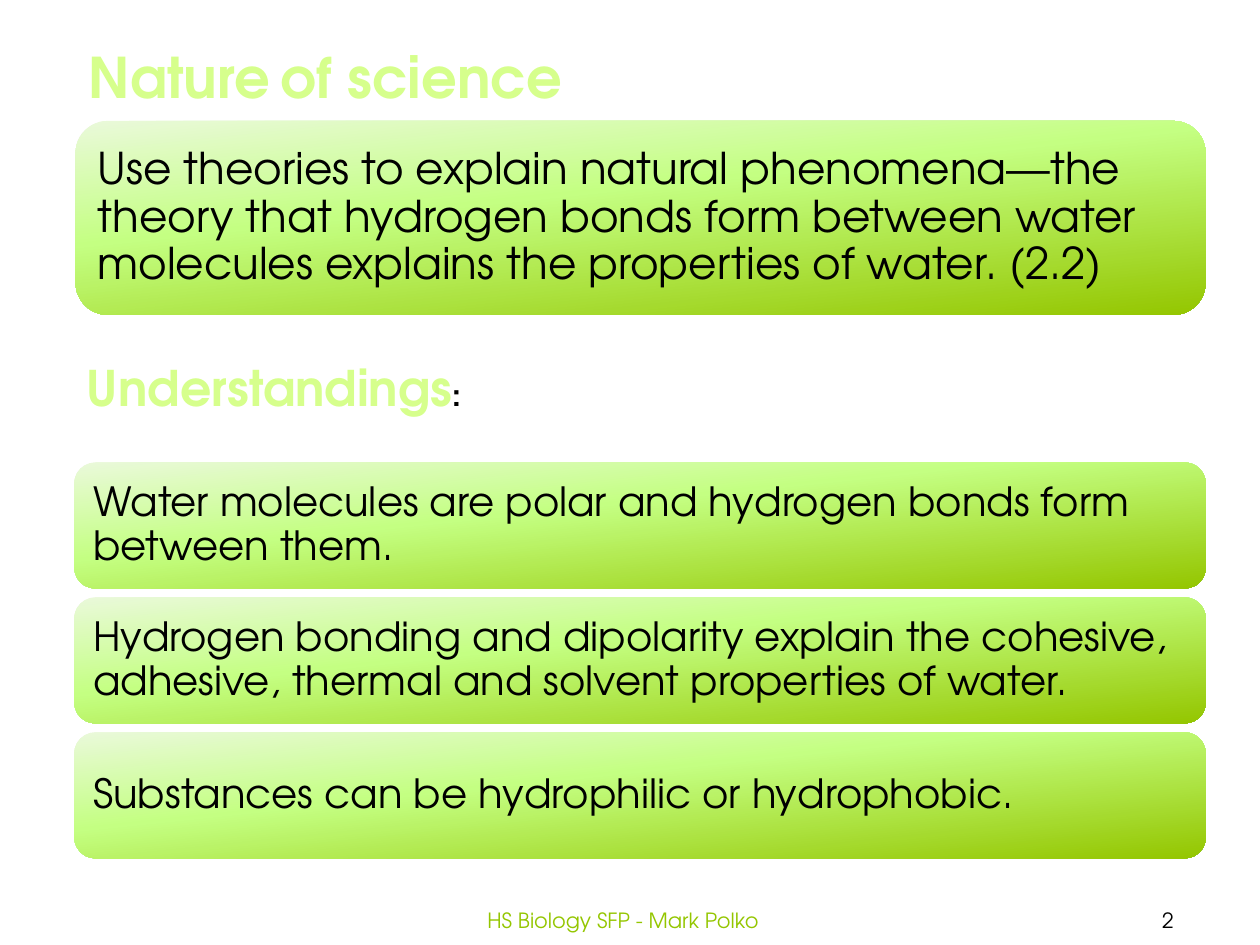
import pptx
import pptx.util
import pptx.dml.color
import pptx.enum.shapes
import pptx.enum.text
import pptx.oxml
import pptx.oxml.ns

Pt = pptx.util.Pt
ALIGN = pptx.enum.text.PP_ALIGN
ANCHOR = pptx.enum.text.MSO_ANCHOR

FONT = "TeX Gyre Adventor"
BLACK, LIME, GREEN = "000000", "D6FF8C", "94C600"
STOPS = [(0, "EAF9DA"), (40, "C4FF82"), (100, GREEN)]
ANGLE = 84

# Content: heading runs are (text, size, colour)
TITLE = [("Nature", 32, LIME), (" ", 20, BLACK), ("of science", 32, LIME)]
SUBTITLE = [("Understandings", 28, LIME), (":", 18, BLACK)]
THEORY = ("Use theories to explain natural phenomena—the theory that hydrogen bonds "
          "form between water molecules explains the properties of water. (2.2)")
UNDERSTANDINGS = [
    "Water molecules are polar and hydrogen bonds form between them.",
    "Hydrogen bonding and dipolarity explain the cohesive, adhesive, thermal "
    "and solvent properties of water.",
    "Substances can be hydrophilic or hydrophobic.",
]
FOOTER = "HS Biology SFP - Mark Polko"
PAGE = "2"

# Layout
CARD_LEFT, CARD_WIDTH = 42.5, 646.5
CARD_TOP, CARD_HEIGHT, CARD_STEP = 264.3, 72, 77.1
THEORY_BOX = (43.2, 69.1, 645.8, 110.9)


def rgb(value):
    return pptx.dml.color.RGBColor.from_string(value)


def add_text(slide, box, runs, align=ALIGN.LEFT, anchor=ANCHOR.MIDDLE, wrap=True, bold=False):
    sp = slide.shapes.add_textbox(*map(Pt, box))
    tf = sp.text_frame
    tf.word_wrap = wrap
    tf.vertical_anchor = anchor
    p = tf.paragraphs[0]
    p.alignment = align
    p.font.name = FONT
    p.font.bold = bold
    for text, size, color in runs:
        r = p.add_run()
        r.text = text
        r.font.name = FONT
        r.font.size = Pt(size)
        r.font.bold = bold
        r.font.color.rgb = rgb(color)
    return tf


def fill_gradient(sp):
    stops = "".join(f'<a:gs pos="{pos * 1000}"><a:srgbClr val="{color}"/></a:gs>'
                    for pos, color in STOPS)
    grad = pptx.oxml.parse_xml(
        f'<a:gradFill {pptx.oxml.ns.nsdecls("a")} rotWithShape="1"><a:gsLst>{stops}</a:gsLst>'
        f'<a:lin ang="{ANGLE * 60000}" scaled="1"/></a:gradFill>')
    sp.fill.background()
    old = sp._element.spPr.find(pptx.oxml.ns.qn("a:noFill"))
    old.getparent().replace(old, grad)


def add_card(slide, box, text, size):
    left, top, width, height = box
    sp = slide.shapes.add_shape(pptx.enum.shapes.MSO_SHAPE.ROUNDED_RECTANGLE, *map(Pt, box))
    sp.shadow.inherit = False
    sp.line.fill.background()
    fill_gradient(sp)
    # The text area stays clear of the rounded corners
    inset = round(height * 0.05, 1)
    tf = add_text(slide, (left + inset, top + inset, width - 2 * inset, height - 2 * inset),
                  [(text, size, BLACK)])
    tf.margin_top = tf.margin_bottom = Pt(7.2)
    tf.paragraphs[0].line_spacing = 0.9


def main():
    prs = pptx.Presentation()
    prs.slide_width, prs.slide_height = Pt(720), Pt(540)
    slide = prs.slides.add_slide(prs.slide_layouts[6])

    # Page number and footer
    add_text(slide, (614.9, 511.2, 105.1, 28.8), [(PAGE, 12, BLACK)], ALIGN.CENTER)
    add_text(slide, (218.2, 511.2, 275.8, 28.8), [(FOOTER, 12, GREEN)], ALIGN.CENTER)

    # Cards
    for i, text in enumerate(UNDERSTANDINGS):
        add_card(slide, (CARD_LEFT, CARD_TOP + i * CARD_STEP, CARD_WIDTH, CARD_HEIGHT), text, 23)
    add_card(slide, THEORY_BOX, THEORY, 25)

    # Headings
    add_text(slide, (42.5, 200.9, 230.4, 41), SUBTITLE, anchor=ANCHOR.TOP, wrap=False, bold=True)
    add_text(slide, (41.8, 20.9, 288.7, 46.1), TITLE, ALIGN.CENTER, ANCHOR.TOP, False, True)

    prs.save("out.pptx")


if __name__ == "__main__":
    main()
